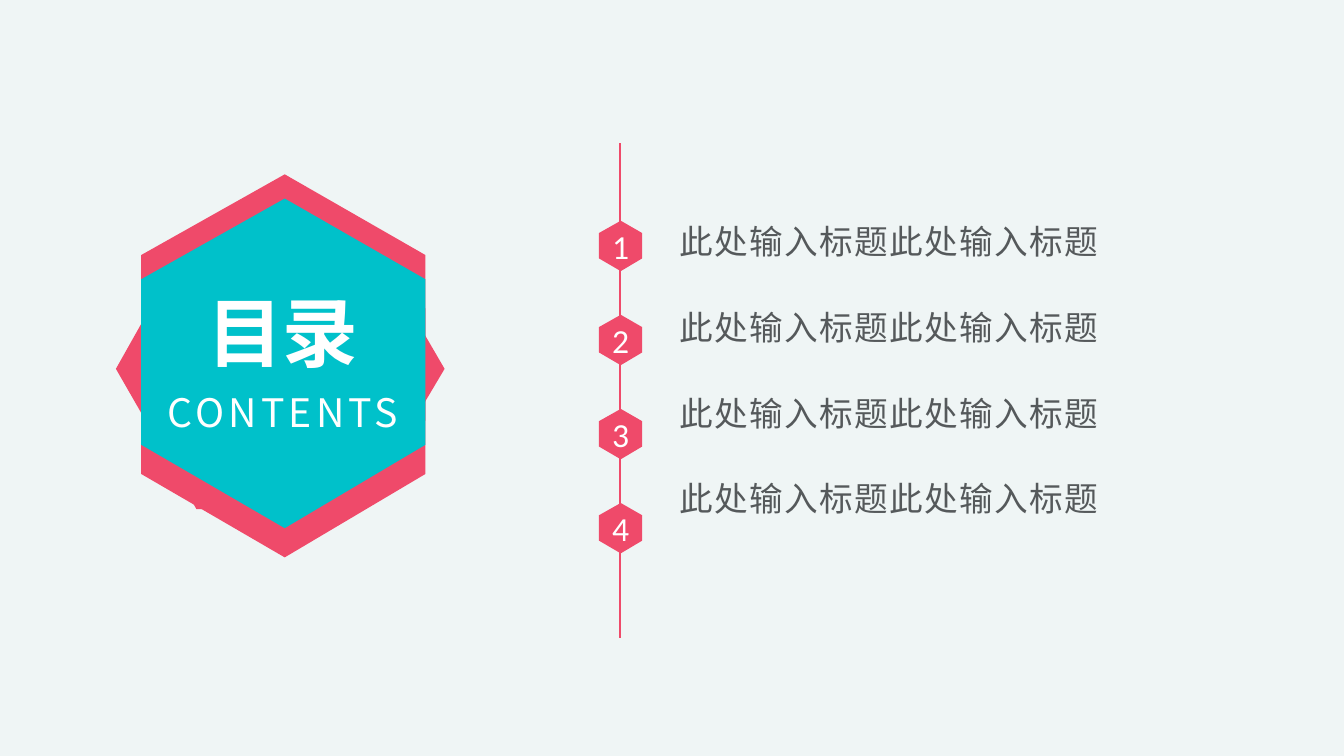
"""Builds a contents slide with a hexagon emblem and a numbered timeline."""
from lxml import etree
from pptx import Presentation
from pptx import util as u
from pptx.dml.color import RGBColor
from pptx.enum import shapes, text
from pptx.oxml.ns import qn

COLORS = {"ground": "EFF5F5", "red": "EF4A6A", "teal": "00C1CA",
          "white": "FFFFFF", "grey": "55595B"}
CJK = "Noto Sans CJK SC"
ENTRIES = ["此处输入标题此处输入标题"] * 4
FIRST_BADGE, PITCH = 2.19, 2.8 / 3
HEXAGON = [(0.505, 0), (1, 0.245), (1, 0.747), (0.505, 1), (0, 0.747), (0, 0.245)]


def color(name):
    return RGBColor.from_string(COLORS[name])


def place(shape, left, top, width, height):
    shape.left, shape.top = u.Inches(left), u.Inches(top)
    shape.width, shape.height = u.Inches(width), u.Inches(height)


def write(frame, lines, size, ink, font=CJK, bold=False, spacing=0, gap=0,
          align=text.PP_ALIGN.CENTER, anchor=text.MSO_ANCHOR.MIDDLE,
          wrap=True, left_inset=0.1):
    frame.auto_size = text.MSO_AUTO_SIZE.NONE
    frame.word_wrap = wrap
    frame.vertical_anchor = anchor
    frame.margin_left = u.Inches(left_inset)
    frame.text = "\n".join(lines)
    for index, line in enumerate(frame.paragraphs):
        line.alignment = align
        line.line_spacing = 1.0
        line.space_before = u.Pt(gap if index else 0)
        run = line.runs[0]
        run.font.size, run.font.bold, run.font.name = u.Pt(size), bold, font
        run.font.color.rgb = color(ink)
        properties = run.font._element
        properties.set("spc", str(spacing * 100))
        etree.SubElement(properties, qn("a:ea")).set("typeface", font)


def add_hexagon(slide, left, top, width, height, fill, sideways=False):
    corners = [(y, x) for x, y in HEXAGON] if sideways else HEXAGON
    points = [(u.Inches(left + x * width), u.Inches(top + y * height))
              for x, y in corners]
    builder = slide.shapes.build_freeform(*points[0], scale=1.0)
    builder.add_line_segments(points[1:], close=True)
    hexagon = builder.convert_to_shape()
    hexagon.shadow.inherit = False
    hexagon.fill.solid()
    hexagon.fill.fore_color.rgb = color(fill)
    hexagon.line.fill.background()
    return hexagon


def add_emblem(slide):
    add_hexagon(slide, 1.15, 2.24, 3.26, 2.81, "red", sideways=True)
    for top, fill in [(1.73, "red"), (2.26, "red"), (1.97, "teal")]:
        add_hexagon(slide, 1.4, top, 2.82, 3.27, fill)
    heading = slide.shapes.title
    heading.element.getparent().append(heading.element)
    place(heading, 1.84, 2.86, 1.93, 0.86)
    write(heading.text_frame, ["目录"], 54, "white", bold=True, wrap=False)
    subtitle = slide.shapes.add_textbox(0, 0, 0, 0)
    place(subtitle, 1.84, 3.66, 1.93, 0.86)
    write(subtitle.text_frame, ["CONTENTS"], 28, "white", spacing=3, wrap=False)


def add_timeline(slide):
    spine = slide.shapes.add_connector(
        shapes.MSO_CONNECTOR.STRAIGHT,
        u.Inches(6.15), u.Inches(1.42), u.Inches(6.15), u.Inches(6.33))
    spine.line.color.rgb = color("red")
    spine.line.width = u.Pt(2)
    etree.SubElement(spine.element.spPr, qn("a:effectLst"))
    for index in range(len(ENTRIES)):
        badge = add_hexagon(slide, 5.94, FIRST_BADGE + index * PITCH, 0.43, 0.5, "red")
        write(badge.text_frame, [str(index + 1)], 24, "white", font="Calibri")


def add_entries(slide):
    entries = slide.placeholders[1]
    place(entries, 6.54, 2.14, 5.09, 3.39)
    write(entries.text_frame, ENTRIES, 24, "grey", spacing=1, gap=32.5,
          align=text.PP_ALIGN.LEFT, anchor=text.MSO_ANCHOR.TOP, left_inset=0.2)
    for line in entries.text_frame.paragraphs:
        properties = line._p.get_or_add_pPr()
        properties.set("marL", "0")
        properties.set("indent", "0")
        etree.SubElement(properties, qn("a:buNone"))


def main():
    deck = Presentation()
    deck.slide_width, deck.slide_height = u.Inches(13.33), u.Inches(7.5)
    slide = deck.slides.add_slide(deck.slide_layouts[1])
    slide.background.fill.solid()
    slide.background.fill.fore_color.rgb = color("ground")
    add_emblem(slide)
    add_timeline(slide)
    add_entries(slide)
    deck.save("out.pptx")


if __name__ == "__main__":
    main()
